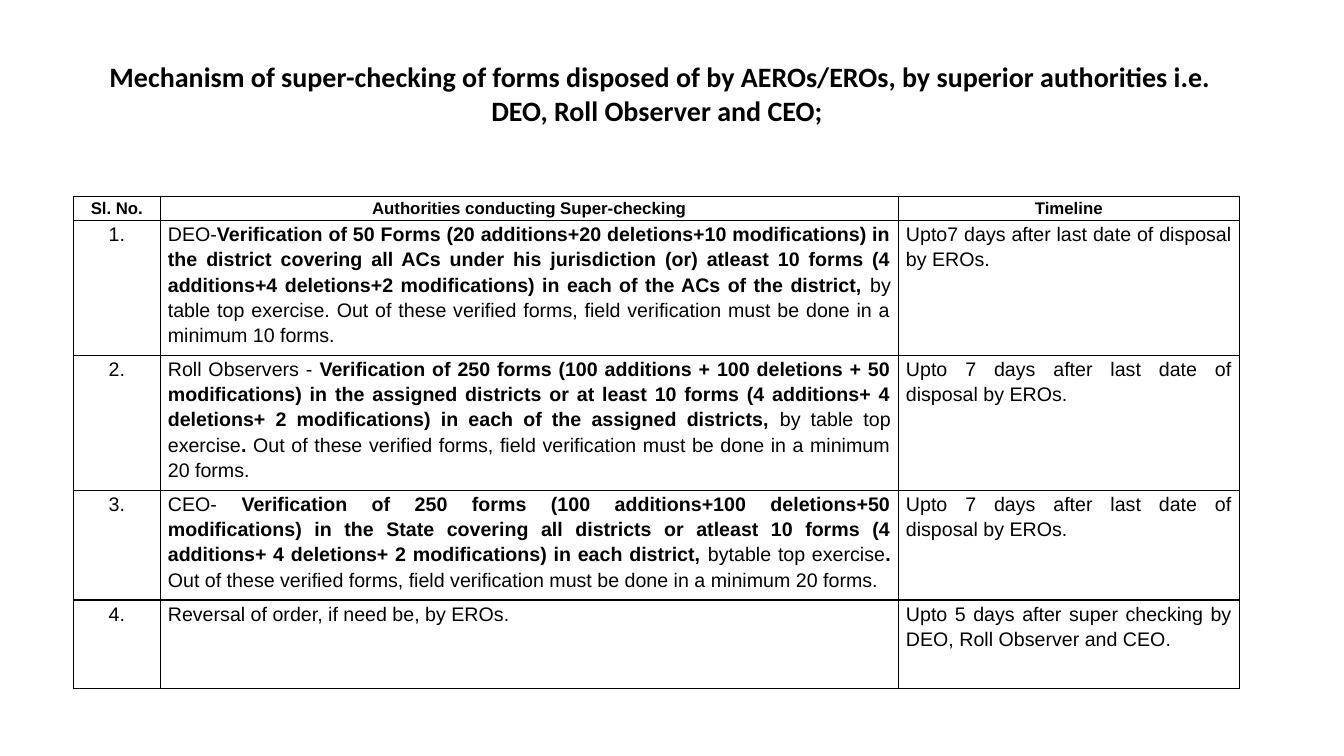
from dataclasses import dataclass

from lxml import etree
from pptx import Presentation
from pptx.dml.color import RGBColor
from pptx.enum.text import MSO_ANCHOR, MSO_AUTO_SIZE, PP_ALIGN
from pptx.oxml.ns import qn
from pptx.util import Cm, Pt

CENTER, JUSTIFY = PP_ALIGN.CENTER, PP_ALIGN.JUSTIFY
TOP = MSO_ANCHOR.TOP
FIXED = MSO_AUTO_SIZE.NONE


@dataclass(frozen=True)
class Theme:
    ink: str = "000000"
    paper: str = "FFFFFF"
    title_font: str = "Calibri"
    body_font: str = "Arial"
    title_size: int = 20
    head_size: int = 12
    body_size: int = 14
    border: int = 1


THEME = Theme()

TITLE = ("Mechanism of super-checking of forms disposed of by AEROs/EROs, "
         "by superior authorities i.e. DEO, Roll Observer and CEO; ")
HEADS = ["Sl. No.", "Authorities conducting Super-checking", "Timeline"]
WIDTHS = [2.19, 18.6, 8.59]
HEIGHTS = [0.6, 3.4, 3.4, 2.77, 2.23]
FIELD = "Out of these verified forms, field verification must be done in a minimum "
DUE = "days after last date of disposal by EROs."

# Each duty alternates plain and bold runs: (runs, space after, timeline, space after)
DUTIES = [
    (["DEO-",
      "Verification of 50 Forms (20 additions+20 deletions+10 modifications) "
      "in the district covering all ACs under his jurisdiction (or) atleast "
      "10 forms (4 additions+4 deletions+2 modifications) in each of the ACs "
      "of the district, ",
      f"by table top exercise. {FIELD}10 forms."],
     6, f"Upto7 {DUE}", 6),
    (["Roll Observers - ",
      "Verification of 250 forms (100 additions + 100 deletions + 50 "
      "modifications) in the assigned districts or at least 10 forms "
      "(4 additions+ 4 deletions+ 2 modifications) in each of the assigned "
      "districts, ",
      "by table top exercise", ".", f" {FIELD}20 forms."],
     6, f"Upto 7 {DUE}", 0),
    (["CEO- ",
      "Verification of 250 forms (100 additions+100 deletions+50 "
      "modifications) in the State covering all districts or atleast 10 forms "
      "(4 additions+ 4 deletions+ 2 modifications) in each district,",
      " bytable top exercise", ".", f" {FIELD}20 forms. "],
     6, f"Upto 7 {DUE}", 0),
    (["Reversal of order, if need be, by EROs."],
     10, "Upto 5 days after super checking by DEO, Roll Observer and CEO.", 0),
]


def add_run(para, text, font, size, bold):
    run = para.add_run()
    run.text = text
    run.font.name = font
    run.font.size = Pt(size)
    run.font.bold = bold
    run.font.color.rgb = RGBColor.from_string(THEME.ink)


def add_title(slide):
    title = slide.shapes.title
    title.left, title.top = Cm(1.85), Cm(1.38)
    title.width, title.height = Cm(29.57), Cm(1.96)
    frame = title.text_frame
    frame.word_wrap = True
    frame.auto_size = FIXED
    frame.vertical_anchor = TOP
    para = frame.paragraphs[0]
    para.alignment = CENTER
    add_run(para, TITLE, THEME.title_font, THEME.title_size, True)


def add_border(cell):
    props = cell._tc.get_or_add_tcPr()
    for index, side in enumerate(("lnL", "lnR", "lnT", "lnB")):
        line = etree.Element(qn(f"a:{side}"), w=str(Pt(THEME.border)))
        fill = etree.SubElement(line, qn("a:solidFill"))
        etree.SubElement(fill, qn("a:srgbClr"), val=THEME.ink)
        props.insert(index, line)


def fill_cell(cell, runs, align, after=0, head=False):
    """Write runs that alternate plain and bold; a heading is all bold."""
    cell.fill.solid()
    cell.fill.fore_color.rgb = RGBColor.from_string(THEME.paper)
    cell.margin_left = cell.margin_right = Cm(0.19)
    cell.margin_top = cell.margin_bottom = 0
    cell.vertical_anchor = TOP
    add_border(cell)
    para = cell.text_frame.paragraphs[0]
    para.alignment = align
    para.line_spacing = 1.15
    para.space_after = Pt(after)
    size = THEME.head_size if head else THEME.body_size
    for index, text in enumerate(runs):
        add_run(para, text, THEME.body_font, size, head or index % 2 == 1)


def add_grid(slide):
    shape = slide.shapes.add_table(
        len(HEIGHTS), len(WIDTHS), Cm(1.85), Cm(4.95),
        Cm(sum(WIDTHS)), Cm(sum(HEIGHTS)))
    table = shape.table
    table.first_row = table.horz_banding = False
    for column, width in zip(table.columns, WIDTHS):
        column.width = Cm(width)
    for row, height in zip(table.rows, HEIGHTS):
        row.height = Cm(height)
    for col, text in enumerate(HEADS):
        fill_cell(table.cell(0, col), [text], CENTER, head=True)
    for row, (runs, gap, due, due_gap) in enumerate(DUTIES, 1):
        fill_cell(table.cell(row, 0), [f"{row}."], CENTER)
        fill_cell(table.cell(row, 1), runs, JUSTIFY, gap)
        fill_cell(table.cell(row, 2), [due], JUSTIFY, due_gap)


def main():
    deck = Presentation()
    deck.slide_width, deck.slide_height = Cm(33.87), Cm(19.05)
    slide = deck.slides.add_slide(deck.slide_layouts[5])
    add_title(slide)
    add_grid(slide)
    deck.save("out.pptx")


if __name__ == "__main__":
    main()
